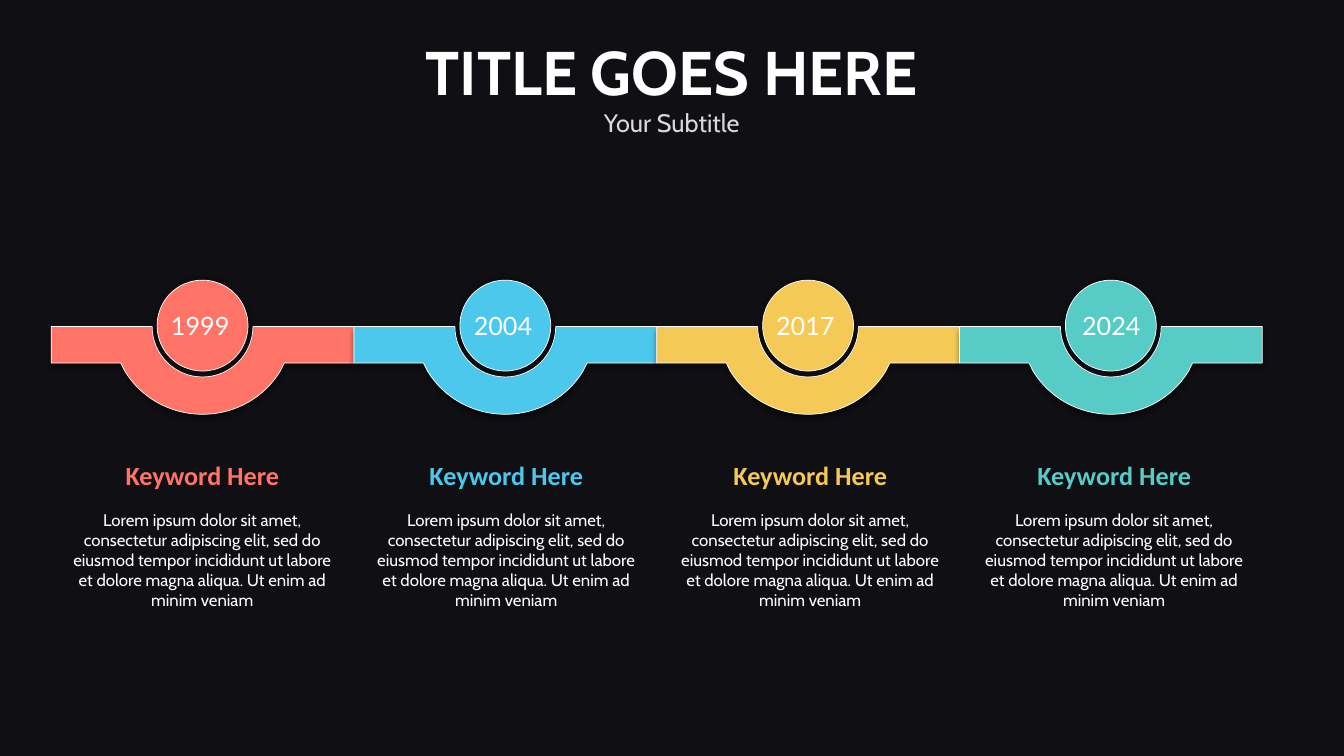
from lxml import etree
from pptx import Presentation
from pptx import util as u
from pptx.dml.color import RGBColor
from pptx.enum import shapes, text
from pptx.oxml.ns import qn

COLORS = {"back": "524E67", "white": "FFFFFF", "gray": "D9D9D9", "black": "000000",
          "coral": "FF7467", "sky": "4CC8EC", "gold": "F4C956", "teal": "57CCC6"}
# Year, colour and left edge of the year label
STEPS = [("1999", "coral", 4.06), ("2004", "sky", 11.69),
         ("2017", "gold", 19.31), ("2024", "teal", 27.02)]
LOREM = ("Lorem ipsum dolor sit amet, consectetur adipiscing elit, sed do eiusmod tempor "
         "incididunt ut labore et dolore magna aliqua. Ut enim ad minim veniam")
FORMATS = {
    "title": {"name": "Cabin", "size": u.Pt(44), "bold": True},
    "subtitle": {"name": "Cabin", "size": u.Pt(18), "bold": False},
    "year": {"name": "Lato", "size": u.Pt(18)},
    "keyword": {"name": "Calibri", "size": u.Pt(18.7), "bold": True},
    "body": {"name": "Cabin", "size": u.Pt(12)},
}
NO_INSETS = dict.fromkeys(["margin_left", "margin_top", "margin_right", "margin_bottom"], 0)


def write(p, words, fmt, color, align=text.PP_ALIGN.CENTER):
    p.alignment = align
    r = p.add_run()
    r.text = words
    for name, value in FORMATS[fmt].items():
        setattr(r.font, name, value)
    r.font.color.rgb = RGBColor.from_string(COLORS[color])


def paint(sp, color, blur, dist, angle):
    sp.fill.solid()
    sp.fill.fore_color.rgb = RGBColor.from_string(COLORS[color])
    sp.line.color.rgb = RGBColor.from_string(COLORS["white"])
    sp.line.width = u.Pt(0.5)
    sp.shadow.inherit = False
    effects = sp._element.spPr.find(qn("a:effectLst"))
    shadow = etree.SubElement(effects, qn("a:outerShdw"), blurRad=str(u.Pt(blur)),
                              dist=str(u.Pt(dist)), dir=str(angle * 60000), rotWithShape="0")
    black = etree.SubElement(shadow, qn("a:srgbClr"), val=COLORS["black"])
    etree.SubElement(black, qn("a:alpha"), val="40000")


prs = Presentation()
prs.slide_width, prs.slide_height = u.Cm(33.87), u.Cm(19.05)
s = prs.slides.add_slide(prs.slide_layouts[5])
s.background.fill.solid()
s.background.fill.fore_color.rgb = RGBColor.from_string(COLORS["back"])

# Dark veil over the background
veil = s.shapes.add_shape(shapes.MSO_SHAPE.RECTANGLE, 0, 0, prs.slide_width, prs.slide_height)
veil.shadow.inherit = False
veil.line.fill.background()
veil.fill.solid()
veil.fill.fore_color.rgb = RGBColor.from_string(COLORS["black"])
veil_color = veil._element.spPr.find(qn("a:solidFill")).find(qn("a:srgbClr"))
etree.SubElement(veil_color, qn("a:alpha"), val="80000")

# Title and subtitle
title = s.shapes.title
s.shapes._spTree.append(title._element)
title.left, title.top, title.width, title.height = u.Cm(9.28), u.Cm(0.72), u.Cm(15.3), u.Cm(2.9)
tf = title.text_frame
tf.auto_size = text.MSO_AUTO_SIZE.NONE
tf.vertical_anchor = text.MSO_ANCHOR.TOP
write(tf.paragraphs[0], "TITLE GOES HERE", "title", "white")
write(tf.add_paragraph(), "Your Subtitle", "subtitle", "gray")

# Timeline bands: points from the centre of the band's top edge, curves in threes
LEFT, PITCH, TOP = 1.29, 7.63, 8.23
HALF = PITCH / 2
OUTLINE = [
    ("line", [(-1.27, 0)]),
    ("curve", [(-1.27, 0.7), (-0.7, 1.27), (0, 1.27)]),
    ("curve", [(0.7, 1.27), (1.27, 0.7), (1.27, 0)]),
    ("line", [(HALF, 0)]),
    ("line", [(HALF, 0.92)]),
    ("line", [(2.06, 0.92)]),
    ("line", [(1.96, 1.12)]),
    ("curve", [(1.56, 1.78), (0.83, 2.21), (0, 2.21)]),
    ("curve", [(-0.83, 2.21), (-1.56, 1.78), (-1.96, 1.12)]),
    ("line", [(-2.06, 0.92)]),
    ("line", [(-HALF, 0.92)]),
]
for i, (year, color, label_left) in enumerate(STEPS):
    cx = LEFT + (i + 0.5) * PITCH
    fb = s.shapes.build_freeform(u.Cm(cx - HALF), u.Cm(TOP))
    fb.add_line_segments([(u.Cm(cx + dx), u.Cm(TOP + dy))
                          for kind, points in OUTLINE for dx, dy in points], close=True)
    sp = fb.convert_to_shape()
    sp.name = f"Band {year}"
    segments = iter(list(sp._element.iter(qn("a:lnTo"))))
    for kind, points in OUTLINE:
        group = [next(segments) for point in points]
        if kind == "curve":
            curve = etree.Element(qn("a:cubicBezTo"))
            group[0].addprevious(curve)
            for segment in group:
                curve.append(segment[0])
                segment.getparent().remove(segment)
    paint(sp, color, 4, 3, 90)

# Descriptions and keywords
TEXT_LEFT, TEXT_PITCH, TEXT_WIDTH, KEY_WIDTH = 1.67, 7.66, 6.86, 3.89
for i, (year, color, label_left) in enumerate(STEPS):
    x = TEXT_LEFT + i * TEXT_PITCH
    key_x = x + (TEXT_WIDTH - KEY_WIDTH) / 2
    for left, top, width, height, wrap, words, fmt, ink in [
            (x, 12.84, TEXT_WIDTH, 2.57, True, LOREM, "body", "white"),
            (key_x, 11.58, KEY_WIDTH, 0.79, False, "Keyword Here", "keyword", color)]:
        tb = s.shapes.add_textbox(u.Cm(left), u.Cm(top), u.Cm(width), u.Cm(height))
        tf = tb.text_frame
        for name, value in NO_INSETS.items():
            setattr(tf, name, value)
        tf.word_wrap = wrap
        write(tf.paragraphs[0], words, fmt, ink)

# Year circles and labels
DIAMETER = 2.29
for i, (year, color, label_left) in enumerate(STEPS):
    x = LEFT + (i + 0.5) * PITCH - DIAMETER / 2
    sp = s.shapes.add_shape(shapes.MSO_SHAPE.OVAL, u.Cm(x), u.Cm(7.06), u.Cm(DIAMETER), u.Cm(DIAMETER))
    sp.name = f"Circle {year}"
    paint(sp, color, 5, 0, 0)
    tb = s.shapes.add_textbox(u.Cm(label_left), u.Cm(7.7), u.Cm(2.08), u.Cm(1.02))
    tb.text_frame.word_wrap = True
    write(tb.text_frame.paragraphs[0], year, "year", "white", text.PP_ALIGN.LEFT)

prs.save("out.pptx")
